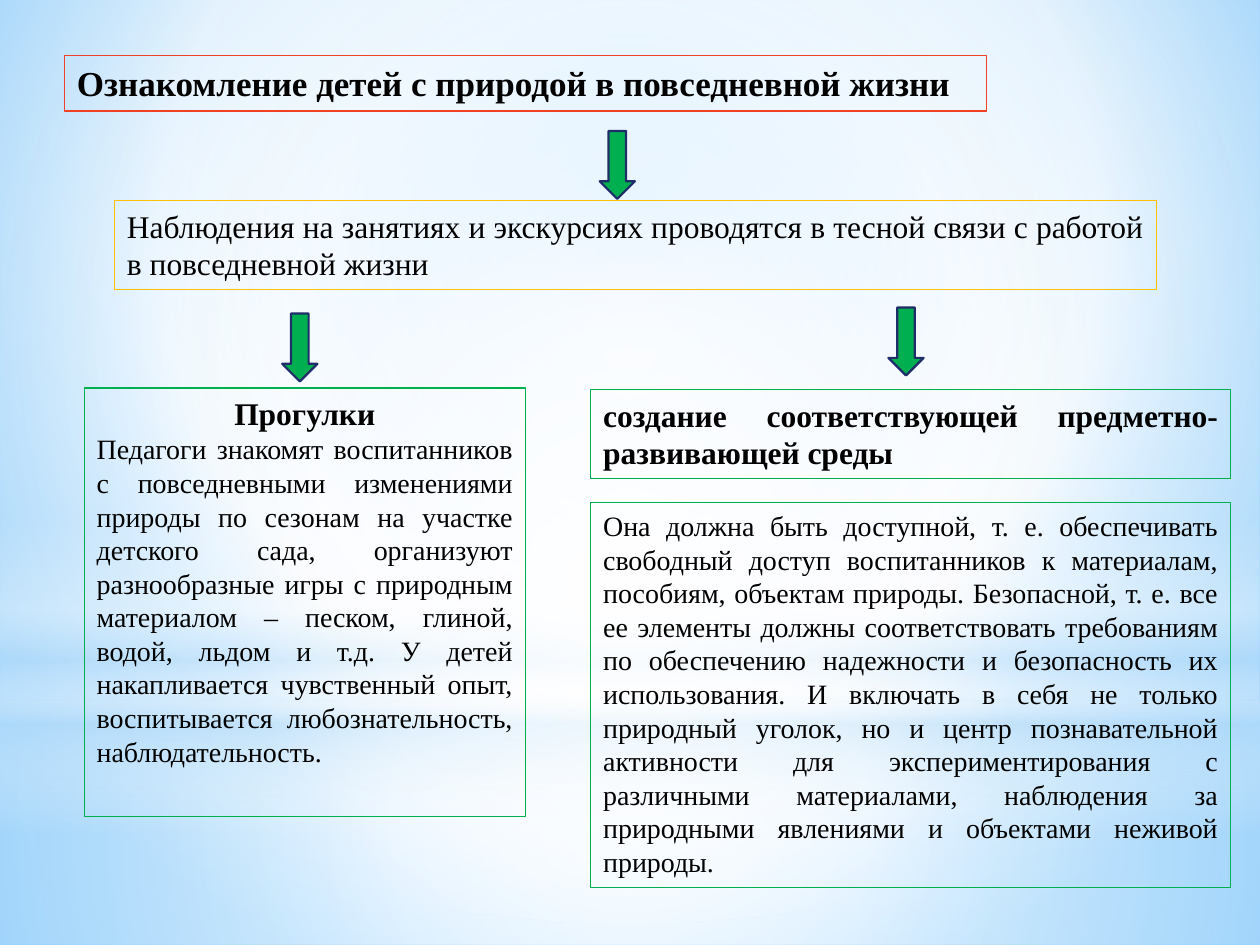
"""Builds a flow slide on showing nature to children in daily life."""
from lxml.etree import SubElement
from pptx import Presentation
from pptx.dml.color import RGBColor
from pptx.enum.shapes import MSO_SHAPE
from pptx.enum.text import PP_ALIGN
from pptx.oxml import parse_xml
from pptx.oxml.ns import nsdecls, qn
from pptx.util import Cm, Pt

BLACK = RGBColor(0x00, 0x00, 0x00)
RED = RGBColor(0xF1, 0x41, 0x24)
GOLD = RGBColor(0xFF, 0xC0, 0x00)
GREEN = RGBColor(0x00, 0xB0, 0x50)
NAVY = RGBColor(0x1F, 0x2E, 0x69)
WHITE = RGBColor(0xFF, 0xFF, 0xFF)
PALE = RGBColor(0xB4, 0xDC, 0xFA)
SKY = RGBColor(0x9E, 0xD5, 0xFF)
BLUE = RGBColor(0x5B, 0xB9, 0xFF)

FONT = "Times New Roman"
WIDE, HIGH = 25.4, 19.05
LEFT, MID, JUST = PP_ALIGN.LEFT, PP_ALIGN.CENTER, PP_ALIGN.JUSTIFY
RECT, OVAL = MSO_SHAPE.RECTANGLE, MSO_SHAPE.OVAL
CORE = (50, 50, 50, 50)

BACK = [(0, SKY, 100), (60, WHITE, 100), (100, BLUE, 100)]
LAYERS = [
    (RECT, 14.17, 4.88, CORE, [(0, WHITE, 91), (37, WHITE, 76), (100, PALE, 79)]),
    (RECT, 0, 14.17, CORE, [(0, WHITE, 89), (48, WHITE, 62), (100, PALE, 79)]),
    (RECT, 10.46, 6.35, None, [(0, WHITE, 0), (29, WHITE, 30), (45, PALE, 40),
                               (55, WHITE, 26), (65, PALE, 60), (100, WHITE, 0)]),
    (OVAL, 4.45, 14.17, CORE, [(0, WHITE, 100), (56, WHITE, 0)]),
]

BOXES = [
    ((1.3, 1.12, 18.59, 1.12), RED, [
        ("Ознакомление детей с природой в повседневной жизни", 20, True, LEFT)]),
    ((2.31, 4.04, 21.01, 1.8), GOLD, [
        ("Наблюдения на занятиях и экскурсиях проводятся в тесной связи "
         "с работой в повседневной жизни", 18, False, JUST)]),
    ((1.7, 7.82, 8.89, 8.64), GREEN, [
        ("Прогулки", 18, True, MID),
        ("Педагоги знакомят воспитанников с повседневными изменениями природы "
         "по сезонам на участке детского сада, организуют разнообразные игры "
         "с природным материалом – песком, глиной, водой, льдом и т.д. У детей "
         "накапливается чувственный опыт, воспитывается любознательность, "
         "наблюдательность.", 16, False, JUST)]),
    ((11.91, 7.85, 12.9, 1.8), GREEN, [
        ("создание соответствующей предметно-развивающей среды", 18, True, JUST)]),
    ((11.91, 10.13, 12.9, 7.77), GREEN, [
        ("Она должна быть доступной, т. е. обеспечивать свободный доступ "
         "воспитанников к материалам, пособиям, объектам природы. Безопасной, "
         "т. е. все ее элементы должны соответствовать требованиям по "
         "обеспечению надежности и безопасность их использования. И включать "
         "в себя не только природный уголок, но и центр познавательной "
         "активности для экспериментирования с различными материалами, "
         "наблюдения за природными явлениями и объектами неживой природы.",
         16, False, JUST)]),
]
ARROWS = [(12.09, 2.64), (5.69, 6.32), (17.91, 6.2)]


def blend(owner, stops, focus):
    """Give a slide or shape a round gradient, or a downward one without focus."""
    owner.fill.background()
    root = owner.element
    old = root.xpath(".//p:bgPr/a:noFill | ./p:spPr/a:noFill")[0]
    grad = parse_xml(f'<a:gradFill {nsdecls("a")} rotWithShape="1"/>')
    row = SubElement(grad, qn("a:gsLst"))
    for pos, color, alpha in stops:
        stop = SubElement(row, qn("a:gs"), pos=str(pos * 1000))
        tint = SubElement(stop, qn("a:srgbClr"), val=str(color))
        SubElement(tint, qn("a:alpha"), val=str(alpha * 1000))
    if focus:
        way = SubElement(grad, qn("a:path"), path="circle")
        sides = {k: str(v * 1000) for k, v in zip("ltrb", focus)}
        SubElement(way, qn("a:fillToRect"), **sides)
    else:
        SubElement(grad, qn("a:lin"), ang="5400000", scaled="0")
    old.getparent().replace(old, grad)


class Backdrop:
    """Pairs the fill of a slide's background with the slide's element."""

    def __init__(self, slide):
        self.fill = slide.background.fill
        self.element = slide.element


def add_layer(slide, kind, top, high, focus, stops):
    """Add one full-width tinted layer."""
    layer = slide.shapes.add_shape(kind, 0, Cm(top), Cm(WIDE), Cm(high))
    layer.shadow.inherit = False
    layer.line.fill.background()
    blend(layer, stops, focus)


def add_box(slide, place, color, paras):
    """Add one outlined text box."""
    box = slide.shapes.add_textbox(*map(Cm, place))
    box.line.color.rgb = color
    box.line.width = Pt(0.75)
    frame = box.text_frame
    frame.word_wrap = True
    for i, (text, size, bold, align) in enumerate(paras):
        para = frame.add_paragraph() if i else frame.paragraphs[0]
        para.alignment = align
        run = para.add_run()
        run.text = text
        run.font.name = FONT
        run.font.size = Pt(size)
        run.font.bold = bold
        run.font.color.rgb = BLACK


def add_arrow(slide, left, top):
    """Add one green arrow that points down."""
    arrow = slide.shapes.add_shape(
        MSO_SHAPE.DOWN_ARROW, Cm(left), Cm(top), Cm(0.71), Cm(1.37))
    arrow.shadow.inherit = False
    arrow.fill.solid()
    arrow.fill.fore_color.rgb = GREEN
    arrow.line.color.rgb = NAVY
    arrow.line.width = Pt(1.25)


def main():
    """Build and save the slide."""
    deck = Presentation()
    deck.slide_width, deck.slide_height = Cm(WIDE), Cm(HIGH)
    slide = deck.slides.add_slide(deck.slide_layouts[6])
    blend(Backdrop(slide), BACK, (20, 10, 20, 60))
    for layer in LAYERS:
        add_layer(slide, *layer)
    for box in BOXES:
        add_box(slide, *box)
    for spot in ARROWS:
        add_arrow(slide, *spot)
    deck.save("out.pptx")


if __name__ == "__main__":
    main()
